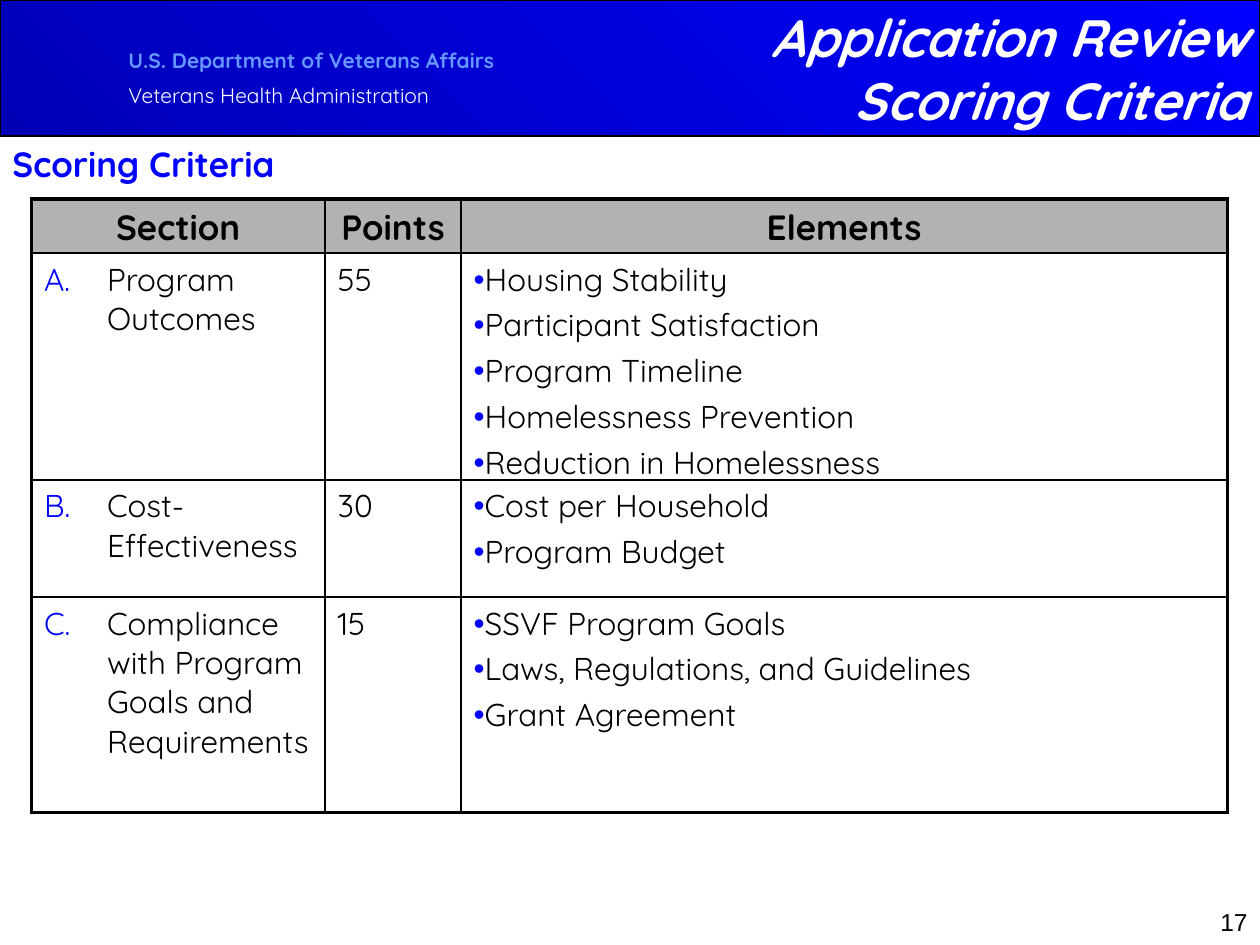
from dataclasses import dataclass

from lxml.etree import SubElement
from pptx import Presentation
from pptx.dml.color import RGBColor as RGB
from pptx.enum.shapes import MSO_SHAPE as Preset
from pptx.enum.text import MSO_ANCHOR as Anchor, PP_ALIGN as Align
from pptx.oxml.ns import qn
from pptx.util import Inches, Pt

# Content
AGENCY = ["U.S. Department of Veterans Affairs", "Veterans Health Administration"]
TITLE = ["Application Review", "Scoring Criteria"]
SUBTITLE = "Scoring Criteria"
PAGE_NUMBER = "17"
HEADERS = ["Section", "Points", "Elements"]
SECTIONS = [
    ("Program Outcomes", "55", [
        "Housing Stability", "Participant Satisfaction", "Program Timeline",
        "Homelessness Prevention", "Reduction in Homelessness"]),
    ("Cost-Effectiveness", "30", ["Cost per Household", "Program Budget"]),
    ("Compliance with Program Goals and Requirements", "15", [
        "SSVF Program Goals", "Laws, Regulations, and Guidelines", "Grant Agreement"]),
]


@dataclass(frozen=True)
class Theme:
    font: str = "Quicksand"
    number_font: str = "Arial"
    black: str = "000000"
    white: str = "FFFFFF"
    blue: str = "0000FF"
    dark_blue: str = "0000B6"
    light_blue: str = "6699FF"
    gray: str = "B2B2B2"
    title: int = 30
    heading: int = 20
    body: int = 18
    number: int = 14
    small: int = 12
    outer_line: float = 2.25
    row_line: float = 1.5
    column_line: float = 1


THEME = Theme()

# Layout in inches
WIDTH, HEIGHT = 10, 7.5
BANNER_HEIGHT = 1.08
TABLE_LEFT, TABLE_TOP = 0.25, 1.58
COLUMNS = [2.33, 1.08, 6.08]
ROWS = [0.43, 1.8, 0.93, 1.71]


def write(paragraph, text, size, color, bold=False, italic=False,
          align=Align.LEFT, before=0, font_name=THEME.font):
    paragraph.alignment = align
    paragraph.space_before = Pt(before)
    run = paragraph.add_run()
    run.text = text
    font = run.font
    font.name, font.size, font.bold, font.italic = font_name, Pt(size), bold, italic
    font.color.rgb = RGB.from_string(color)


def paragraphs(frame, count):
    return [frame.paragraphs[0]] + [frame.add_paragraph() for _ in range(count - 1)]


def add_text_box(slide, left, top, width, height, anchor=Anchor.TOP):
    box = slide.shapes.add_textbox(*map(Inches, (left, top, width, height)))
    box.text_frame.word_wrap = True
    box.text_frame.vertical_anchor = anchor
    return box.text_frame


def add_bullet(paragraph, tag, indent=0, **attributes):
    properties = paragraph._p.get_or_add_pPr()
    properties.set("marL", str(Inches(indent)))
    properties.set("indent", str(-Inches(indent)))
    color = SubElement(properties, qn("a:buClr"))
    SubElement(color, qn("a:srgbClr"), val=THEME.blue)
    if tag == "a:buChar":
        SubElement(properties, qn("a:buFont"), typeface=THEME.number_font)
    SubElement(properties, qn(tag), **attributes)


def set_borders(cell, row, column):
    last_row, last_column = len(ROWS) - 1, len(COLUMNS) - 1
    sides = [
        ("a:lnL", column == 0, THEME.column_line),
        ("a:lnR", column == last_column, THEME.column_line),
        ("a:lnT", row == 0, THEME.row_line),
        ("a:lnB", row == last_row, THEME.row_line),
    ]
    properties = cell._tc.get_or_add_tcPr()
    for tag, is_outer, inner_line in sides:
        width = THEME.outer_line if is_outer else inner_line
        line = SubElement(properties, qn(tag), w=str(Pt(width)))
        fill = SubElement(line, qn("a:solidFill"))
        SubElement(fill, qn("a:srgbClr"), val=THEME.black)


def add_banner(slide):
    banner = slide.shapes.add_shape(
        Preset.RECTANGLE, 0, 0, Inches(WIDTH), Inches(BANNER_HEIGHT))
    banner.shadow.inherit = False
    banner.fill.gradient()
    banner.fill.gradient_angle = 45
    for stop, color in zip(banner.fill.gradient_stops, (THEME.dark_blue, THEME.blue)):
        stop.color.rgb = RGB.from_string(color)
    banner.line.color.rgb = RGB.from_string(THEME.black)
    banner.line.width = Pt(0.75)

    agency, administration = paragraphs(add_text_box(slide, 0.92, 0.33, 4, 0.6), 2)
    write(agency, AGENCY[0], THEME.small, THEME.light_blue, bold=True)
    write(administration, AGENCY[1], THEME.small, THEME.white, before=5.5)

    title = add_text_box(slide, 4, 0, 6, BANNER_HEIGHT, Anchor.MIDDLE)
    for paragraph, text in zip(paragraphs(title, len(TITLE)), TITLE):
        write(paragraph, text, THEME.title, THEME.white, True, True, Align.RIGHT)


def add_scoring_table(slide):
    table = slide.shapes.add_table(
        len(ROWS), len(COLUMNS), Inches(TABLE_LEFT), Inches(TABLE_TOP),
        Inches(sum(COLUMNS)), Inches(sum(ROWS))).table
    table.first_row = table.horz_banding = False
    for column, width in zip(table.columns, COLUMNS):
        column.width = Inches(width)
    for row, height in zip(table.rows, ROWS):
        row.height = Inches(height)

    # Borders and fills
    for row in range(len(ROWS)):
        for column in range(len(COLUMNS)):
            cell = table.cell(row, column)
            cell.margin_bottom = 0
            set_borders(cell, row, column)
            cell.fill.solid()
            cell.fill.fore_color.rgb = RGB.from_string(THEME.white if row else THEME.gray)

    # Header row
    for column, text in enumerate(HEADERS):
        write(table.cell(0, column).text_frame.paragraphs[0], text,
              THEME.heading, THEME.black, bold=True, align=Align.CENTER)

    # Lettered sections with points and bulleted elements
    for row, (section, points, elements) in enumerate(SECTIONS, 1):
        name, score, details = (table.cell(row, i).text_frame for i in range(3))
        add_bullet(name.paragraphs[0], "a:buAutoNum", 0.5,
                   type="alphaUcPeriod", startAt=str(row))
        write(name.paragraphs[0], section, THEME.body, THEME.black)
        write(score.paragraphs[0], points, THEME.body, THEME.black)
        for i, paragraph in enumerate(paragraphs(details, len(elements))):
            add_bullet(paragraph, "a:buChar", char="•")
            write(paragraph, elements[i], THEME.body, THEME.black,
                  before=0.2 * THEME.body if i else 0)


def main():
    presentation = Presentation()
    presentation.slide_width, presentation.slide_height = Inches(WIDTH), Inches(HEIGHT)
    slide = presentation.slides.add_slide(presentation.slide_layouts[6])

    add_banner(slide)
    subtitle = add_text_box(slide, 0, BANNER_HEIGHT, 9.75, 0.45)
    write(subtitle.paragraphs[0], SUBTITLE, THEME.heading, THEME.blue, bold=True)
    add_scoring_table(slide)
    number = add_text_box(slide, 7.92, 7.15, 2.08, 0.35)
    write(number.paragraphs[0], PAGE_NUMBER, THEME.number, THEME.black,
          align=Align.RIGHT, font_name=THEME.number_font)

    presentation.save("out.pptx")


if __name__ == "__main__":
    main()
